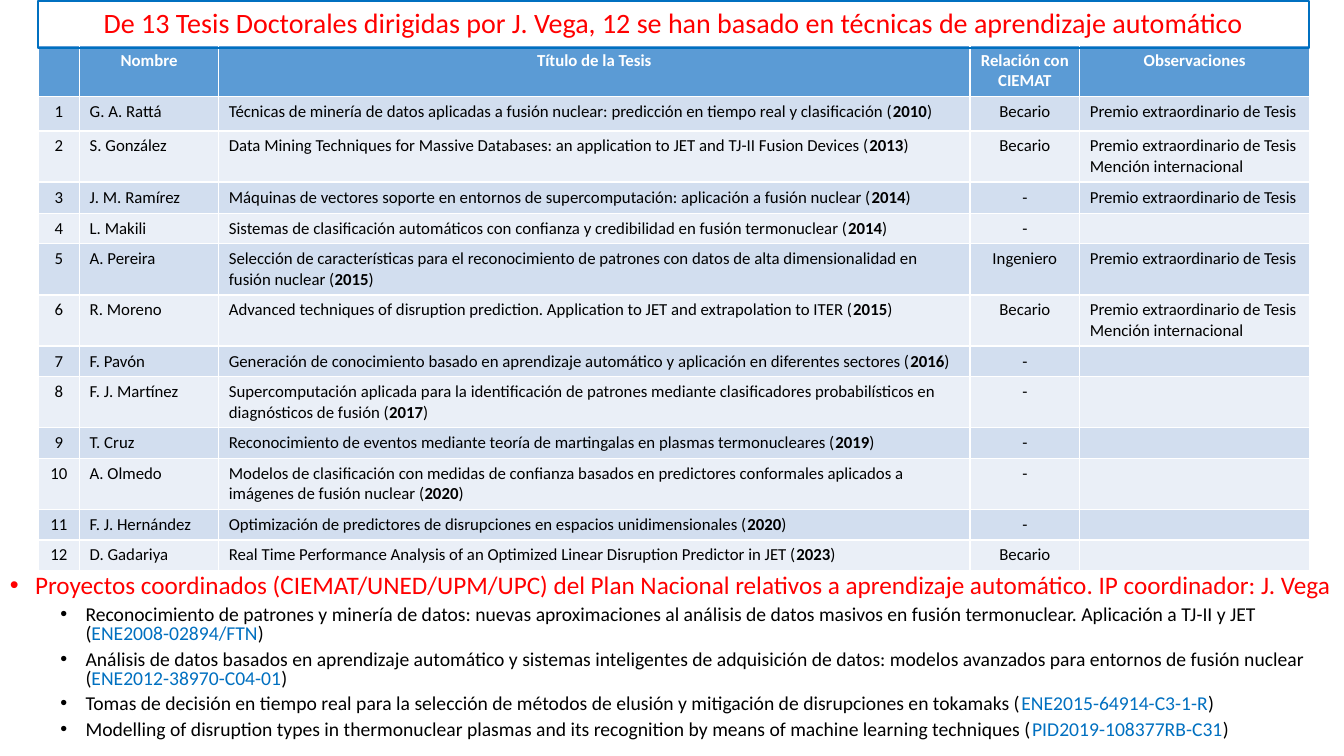
import pptx
import pptx.dml.color
import pptx.enum.text
import pptx.oxml.ns
import pptx.util
from lxml import etree

Inches = pptx.util.Inches
Pt = pptx.util.Pt
CENTER = pptx.enum.text.PP_ALIGN.CENTER
LEFT = pptx.enum.text.PP_ALIGN.LEFT
qn = pptx.oxml.ns.qn


def rgb(value):
    return pptx.dml.color.RGBColor.from_string(value)


def write(para, pieces, size):
    para.text = pieces[0][0]
    for text, color, bold in pieces[1:]:
        para.add_run().text = text
    for span, (text, color, bold) in zip(para.runs, pieces):
        span.font.name = "Calibri"
        span.font.size = Pt(size)
        span.font.bold = bold
        span.font.color.rgb = rgb(color)


deck = pptx.Presentation()
deck.slide_width = Inches(13.33)
deck.slide_height = Inches(7.5)
page = deck.slides.add_slide(deck.slide_layouts[5])

AWARD = "Premio extraordinario de Tesis"
AWARD_INTERNATIONAL = AWARD + "\nMención internacional"
headers = ["", "Nombre", "Título de la Tesis", "Relación con CIEMAT", "Observaciones"]
theses = [
    ("G. A. Rattá", "Técnicas de minería de datos aplicadas a fusión nuclear: predicción en tiempo real y clasificación", "2010", "Becario", AWARD),
    ("S. González", "Data Mining Techniques for Massive Databases: an application to JET and TJ-II Fusion Devices", "2013", "Becario", AWARD_INTERNATIONAL),
    ("J. M. Ramírez", "Máquinas de vectores soporte en entornos de supercomputación: aplicación a fusión nuclear", "2014", "-", AWARD),
    ("L. Makili", "Sistemas de clasificación automáticos con confianza y credibilidad en fusión termonuclear", "2014", "-", ""),
    ("A. Pereira", "Selección de características para el reconocimiento de patrones con datos de alta dimensionalidad en fusión nuclear", "2015", "Ingeniero", AWARD),
    ("R. Moreno", "Advanced techniques of disruption prediction. Application to JET and extrapolation to ITER", "2015", "Becario", AWARD_INTERNATIONAL),
    ("F. Pavón", "Generación de conocimiento basado en aprendizaje automático y aplicación en diferentes sectores", "2016", "-", ""),
    ("F. J. Martínez", "Supercomputación aplicada para la identificación de patrones mediante clasificadores probabilísticos en diagnósticos de fusión", "2017", "-", ""),
    ("T. Cruz", "Reconocimiento de eventos mediante teoría de martingalas en plasmas termonucleares", "2019", "-", ""),
    ("A. Olmedo", "Modelos de clasificación con medidas de confianza basados en predictores conformales aplicados a imágenes de fusión nuclear", "2020", "-", ""),
    ("F. J. Hernández", "Optimización de predictores de disrupciones en espacios unidimensionales", "2020", "-", ""),
    ("D. Gadariya", "Real Time Performance Analysis of an Optimized Linear Disruption Predictor in JET", "2023", "Becario", ""),
]
column_widths = [0.41, 1.38, 7.45, 1.09, 2.28]
row_heights = [0.51, 0.34, 0.44, 0.31, 0.29, 0.45, 0.44, 0.3, 0.44, 0.3, 0.44, 0.3, 0.3]

table = page.shapes.add_table(
    len(row_heights), len(column_widths), Inches(0.38), Inches(0.45), Inches(12.6), Inches(5.15)
).table
for column, width in zip(table.columns, column_widths):
    column.width = Inches(width)
for row, height in zip(table.rows, row_heights):
    row.height = Inches(height)

rows = [headers]
for number, (name, title, year, relation, notes) in enumerate(theses, 1):
    rows.append([str(number), name, (title, year), relation, notes])

for row_index, row in enumerate(rows):
    is_header = row_index == 0
    fill = "5B9BD5" if is_header else ("EAEFF7", "D2DEEF")[row_index % 2]
    color = "FFFFFF" if is_header else "000000"
    for column_index, content in enumerate(row):
        cell = table.cell(row_index, column_index)
        cell.fill.solid()
        cell.fill.fore_color.rgb = rgb(fill)
        if isinstance(content, tuple):
            title, year = content
            pieces = [(title + " (", color, False), (year, color, True), (")", color, False)]
            write(cell.text_frame.paragraphs[0], pieces, 12)
            continue
        cell.text_frame.text = content
        for para in cell.text_frame.paragraphs:
            para.alignment = CENTER if is_header or column_index in (0, 3) else LEFT
            if content:
                write(para, [(para.text, color, is_header)], 12)
            else:
                etree.SubElement(para._p, qn("a:endParaRPr"), sz="1200")

projects = [
    ("Reconocimiento de patrones y minería de datos: nuevas aproximaciones al análisis de datos masivos en fusión termonuclear. Aplicación a TJ-II y JET", "ENE2008-02894/FTN"),
    ("Análisis de datos basados en aprendizaje automático y sistemas inteligentes de adquisición de datos: modelos avanzados para entornos de fusión nuclear", "ENE2012-38970-C04-01"),
    ("Tomas de decisión en tiempo real para la selección de métodos de elusión y mitigación de disrupciones en tokamaks", "ENE2015-64914-C3-1-R"),
    ("Modelling of disruption types in thermonuclear plasmas and its recognition by means of machine learning techniques", "PID2019-108377RB-C31"),
]
project_box = page.shapes.add_textbox(Inches(0), Inches(5.66), Inches(13.33), Inches(1.74))
project_frame = project_box.text_frame
project_frame.word_wrap = True
heading = project_frame.paragraphs[0]
write(heading, [("Proyectos coordinados (CIEMAT/UNED/UPM/UPC) del Plan Nacional relativos a aprendizaje automático. IP coordinador: J. Vega", "FF0000", False)], 18)
for description, code in projects:
    para = project_frame.add_paragraph()
    para.level = 1
    write(para, [(description + " (", "000000", False), (code, "0070C0", False), (")", "000000", False)], 14)
for para in project_frame.paragraphs:
    para.line_spacing = 0.8
    para.space_before = Pt(5 if para.level else 10)
    properties = para._p.get_or_add_pPr()
    properties.set("marL", str(Inches(0.75 if para.level else 0.25)))
    properties.set("indent", str(Inches(-0.25)))
    etree.SubElement(properties, qn("a:buFont"), typeface="Arial")
    etree.SubElement(properties, qn("a:buChar"), char="•")

headline = page.shapes.title
headline.left, headline.top = Inches(0.38), Inches(0.01)
headline.width, headline.height = Inches(12.6), Inches(0.47)
headline.line.color.rgb = rgb("0070C0")
headline.line.width = Pt(1.5)
headline.text_frame.word_wrap = True
headline.text_frame.auto_size = pptx.enum.text.MSO_AUTO_SIZE.NONE
headline.text_frame.vertical_anchor = pptx.enum.text.MSO_ANCHOR.MIDDLE
para = headline.text_frame.paragraphs[0]
write(para, [("De 13 Tesis Doctorales dirigidas por J. Vega, 12 se han basado en técnicas de aprendizaje automático", "FF0000", False)], 20)
para.alignment = CENTER
para.line_spacing = 0.9
para.space_before = Pt(10)
page.shapes.element.append(headline.element)

deck.save("out.pptx")
